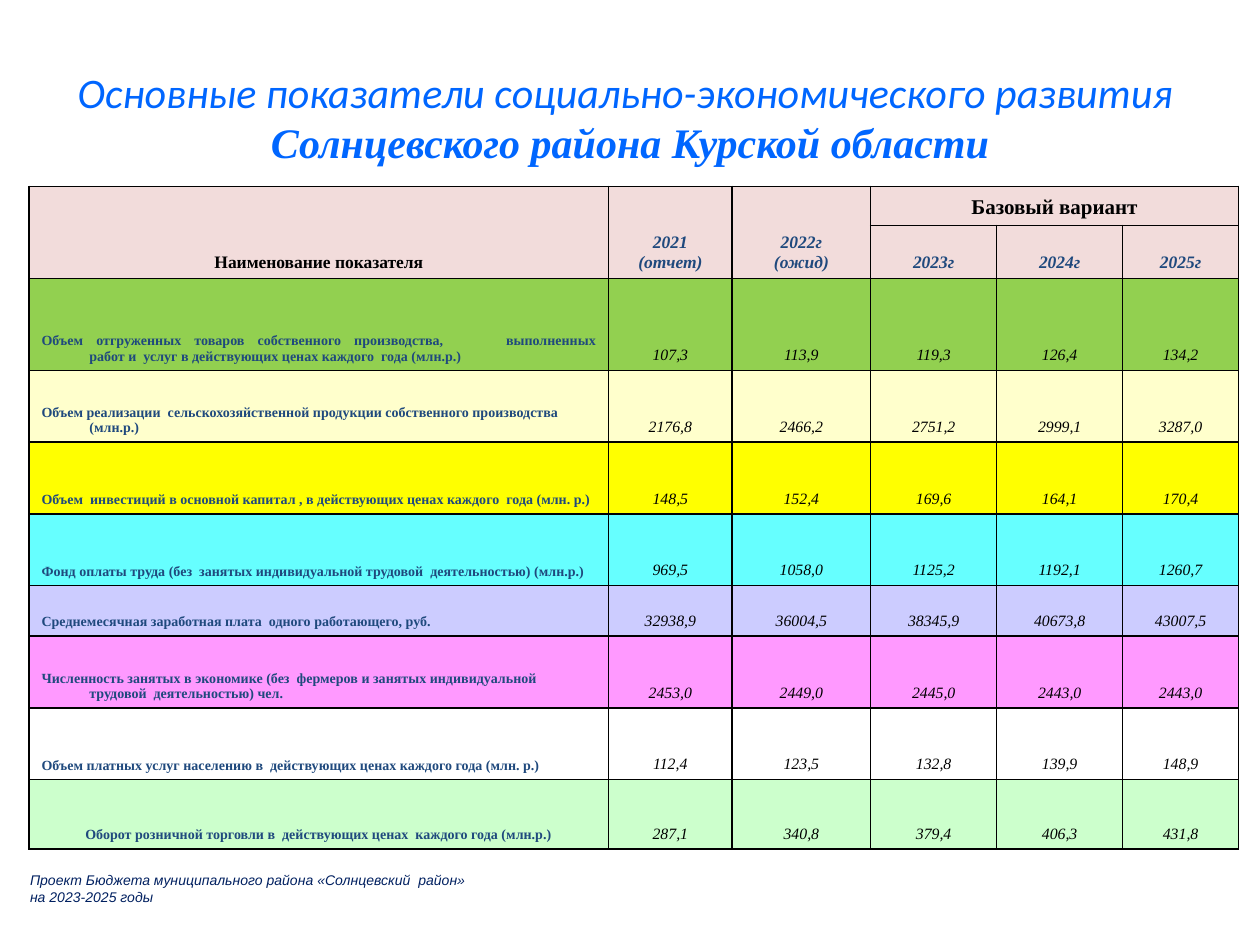
from lxml.etree import SubElement
from pptx import Presentation
from pptx.dml.color import RGBColor
from pptx.enum.text import MSO_ANCHOR as Anchor, PP_ALIGN as Align
from pptx.oxml.ns import qn
from pptx.util import Inches, Pt

UNIT = 0.1
SERIF = "Times New Roman"
HANGING = 3.8
COLORS = {
    "title": "0066FF", "ink": "000000", "label": "1F497D", "footer": "002060",
    "header": "F2DCDB", "green": "92D050", "cream": "FFFFCC", "yellow": "FFFF00",
    "cyan": "66FFFF", "lavender": "CCCCFF", "pink": "FF99FF", "mint": "CCFFCC",
}
COLUMNS = [46, 9.8, 11, 10, 6, 4, 2.8, 6.4]
ROWS = [6.6, 5.9, 3.1, 4.2, 7.3, 5.7, 5.7, 5.7, 4, 5.7, 5.7, 5.5]
HEADER_ROW, YEAR_ROW, DATA_ROW = 2, 3, 4
VALUE_COLUMNS = [1, 2, 3, 4, 6]
HEADINGS = [
    (HEADER_ROW, 0, ["Наименование показателя"], "ink", 10, False),
    (HEADER_ROW, 1, ["2021", "(отчет)"], "label", 10, True),
    (HEADER_ROW, 2, ["2022г", "(ожид)"], "label", 10, True),
    (HEADER_ROW, 3, ["Базовый вариант"], "ink", 12, False),
    (YEAR_ROW, 3, ["2023г"], "label", 10, True),
    (YEAR_ROW, 4, ["2024г"], "label", 10, True),
    (YEAR_ROW, 6, ["2025г"], "label", 10, True),
]
INDICATORS = [
    ("Объем отгруженных товаров собственного производства,\tвыполненных работ и  услуг в действующих ценах каждого  года (млн.р.)",
     Align.JUSTIFY, "green", "107,3 113,9 119,3 126,4 134,2"),
    ("Объем реализации  сельскохозяйственной продукции собственного производства (млн.р.)",
     Align.LEFT, "cream", "2176,8 2466,2 2751,2 2999,1 3287,0"),
    ("Объем  инвестиций в основной капитал , в действующих ценах каждого  года (млн. р.)",
     Align.LEFT, "yellow", "148,5 152,4 169,6 164,1 170,4"),
    ("Фонд оплаты труда (без  занятых индивидуальной трудовой  деятельностью) (млн.р.)",
     Align.LEFT, "cyan", "969,5 1058,0 1125,2 1192,1 1260,7"),
    ("Среднемесячная заработная плата  одного работающего, руб.",
     Align.LEFT, "lavender", "32938,9 36004,5 38345,9 40673,8 43007,5"),
    ("Численность занятых в экономике (без  фермеров и занятых индивидуальной трудовой  деятельностью) чел.",
     Align.LEFT, "pink", "2453,0 2449,0 2445,0 2443,0 2443,0"),
    ("Объем платных услуг населению в  действующих ценах каждого года (млн. р.)",
     Align.JUSTIFY, None, "112,4 123,5 132,8 139,9 148,9"),
    ("Оборот розничной торговли в  действующих ценах  каждого года (млн.р.)",
     Align.CENTER, "mint", "287,1 340,8 379,4 406,3 431,8"),
]


def grid(*steps):
    """Convert grid steps to a list of lengths."""
    return [Inches(step * UNIT) for step in steps]


def add_run(paragraph, text, font_name, size, color, bold=False, italic=False):
    """Append one formatted run to the paragraph."""
    run = paragraph.add_run()
    run.text = text
    font = run.font
    font.name, font.size, font.bold, font.italic = font_name, Pt(size), bold, italic
    font.color.rgb = RGBColor.from_string(COLORS[color])


def next_paragraph(frame, index):
    """Return the first paragraph of the frame or a new one."""
    return frame.add_paragraph() if index else frame.paragraphs[0]


def add_text_frame(slide, *box):
    """Add a wrapping text box and return its text frame."""
    frame = slide.shapes.add_textbox(*grid(*box)).text_frame
    frame.word_wrap = True
    return frame


def add_title(slide):
    """Add the two-line centred title."""
    frame = add_text_frame(slide, 5, 3, 90, 12.5)
    frame.vertical_anchor = Anchor.MIDDLE
    paragraph = frame.paragraphs[0]
    paragraph.alignment = Align.CENTER
    add_run(paragraph, "Основные показатели социально-экономического развития ",
            "Calibri", 24, "title", italic=True)
    paragraph.add_line_break()
    add_run(paragraph, "Солнцевского района Курской области", SERIF, 24, "title", True, True)


def add_footer(slide):
    """Add the budget project note under the table."""
    frame = add_text_frame(slide, 1.4, 68.7, 69, 3.7)
    lines = ["Проект Бюджета муниципального района «Солнцевский  район»", "на 2023-2025 годы"]
    for index, line in enumerate(lines):
        add_run(next_paragraph(frame, index), line, "Arial", 8, "footer", italic=True)


def set_borders(cell, sides):
    """Draw thin dark borders on the given sides of the cell."""
    properties = cell._tc.get_or_add_tcPr()
    for side in sides:
        line = SubElement(properties, qn(f"a:ln{side}"), w=str(Pt(1)))
        fill = SubElement(line, qn("a:solidFill"))
        SubElement(fill, qn("a:srgbClr"), val=COLORS["ink"])


def set_fill(cell, color):
    """Fill the cell with a named colour, or leave it clear."""
    if color:
        cell.fill.solid()
        cell.fill.fore_color.rgb = RGBColor.from_string(COLORS[color])
    else:
        cell.fill.background()


def set_hanging(paragraph):
    """Give the paragraph a hanging indent."""
    [indent] = grid(HANGING)
    properties = paragraph._p.get_or_add_pPr()
    properties.set("marL", str(indent))
    properties.set("indent", str(-indent))


def add_tab_stop(paragraph, step):
    """Add a left tab stop to the paragraph."""
    [position] = grid(step)
    stops = SubElement(paragraph._p.get_or_add_pPr(), qn("a:tabLst"))
    SubElement(stops, qn("a:tab"), pos=str(position), algn="l")


def write_cell(cell, lines, size, color, bold, italic, alignment=Align.CENTER, hanging=True):
    """Write bottom-anchored lines into the cell."""
    cell.vertical_anchor = Anchor.BOTTOM
    for index, line in enumerate(lines):
        paragraph = next_paragraph(cell.text_frame, index)
        paragraph.alignment = alignment
        if hanging:
            set_hanging(paragraph)
        if "\t" in line:
            add_tab_stop(paragraph, 33)
        add_run(paragraph, line, SERIF, size, color, bold, italic)


def merge_cells(table):
    """Merge the spacer, heading and year cells."""
    spans = [(0, 0, 0, 7), (1, 3, 1, 4), (1, 5, 1, 6), (HEADER_ROW, 3, HEADER_ROW, 7)]
    spans += [(HEADER_ROW, column, YEAR_ROW, column) for column in range(3)]
    spans += [(row, column, row, column + 1)
              for row in range(YEAR_ROW, len(ROWS)) for column in (4, 6)]
    for top, left, bottom, right in spans:
        table.cell(top, left).merge(table.cell(bottom, right))


def format_cells(table):
    """Set borders and fills by row."""
    fills = [None, None, "header", "header"] + [color for _, _, color, _ in INDICATORS]
    sides = [[], ["B"]] + [["L", "R", "T", "B"]] * (len(ROWS) - HEADER_ROW)
    for row, color, row_sides in zip(table.rows, fills, sides):
        for cell in row.cells:
            set_borders(cell, row_sides)
            set_fill(cell, color)


def add_indicator_table(slide):
    """Add the table of development indicators."""
    box = grid(2.3, 2.3, sum(COLUMNS), sum(ROWS))
    table = slide.shapes.add_table(len(ROWS), len(COLUMNS), *box).table
    table.first_row = table.horz_banding = False
    style = table._tbl.tblPr.find(qn("a:tableStyleId"))
    style.text = "{2D5ABB26-0587-4C30-8999-92F81FD0307C}"
    for column, width in zip(table.columns, grid(*COLUMNS)):
        column.width = width
    for row, height in zip(table.rows, grid(*ROWS)):
        row.height = height
    merge_cells(table)
    format_cells(table)
    for row, column, lines, color, size, italic in HEADINGS:
        write_cell(table.cell(row, column), lines, size, color, True, italic)
    for row, (label, alignment, _, values) in enumerate(INDICATORS, DATA_ROW):
        write_cell(table.cell(row, 0), [label], 8, "label", True, False, alignment)
        for column, value in zip(VALUE_COLUMNS, values.split()):
            write_cell(table.cell(row, column), [value], 9, "ink", False, True,
                       hanging=column < 4)


def main():
    """Build and save the slide."""
    presentation = Presentation()
    presentation.slide_width, presentation.slide_height = grid(100, 75)
    slide = presentation.slides.add_slide(presentation.slide_layouts[6])
    add_title(slide)
    add_indicator_table(slide)
    add_footer(slide)
    presentation.save("out.pptx")


if __name__ == "__main__":
    main()
